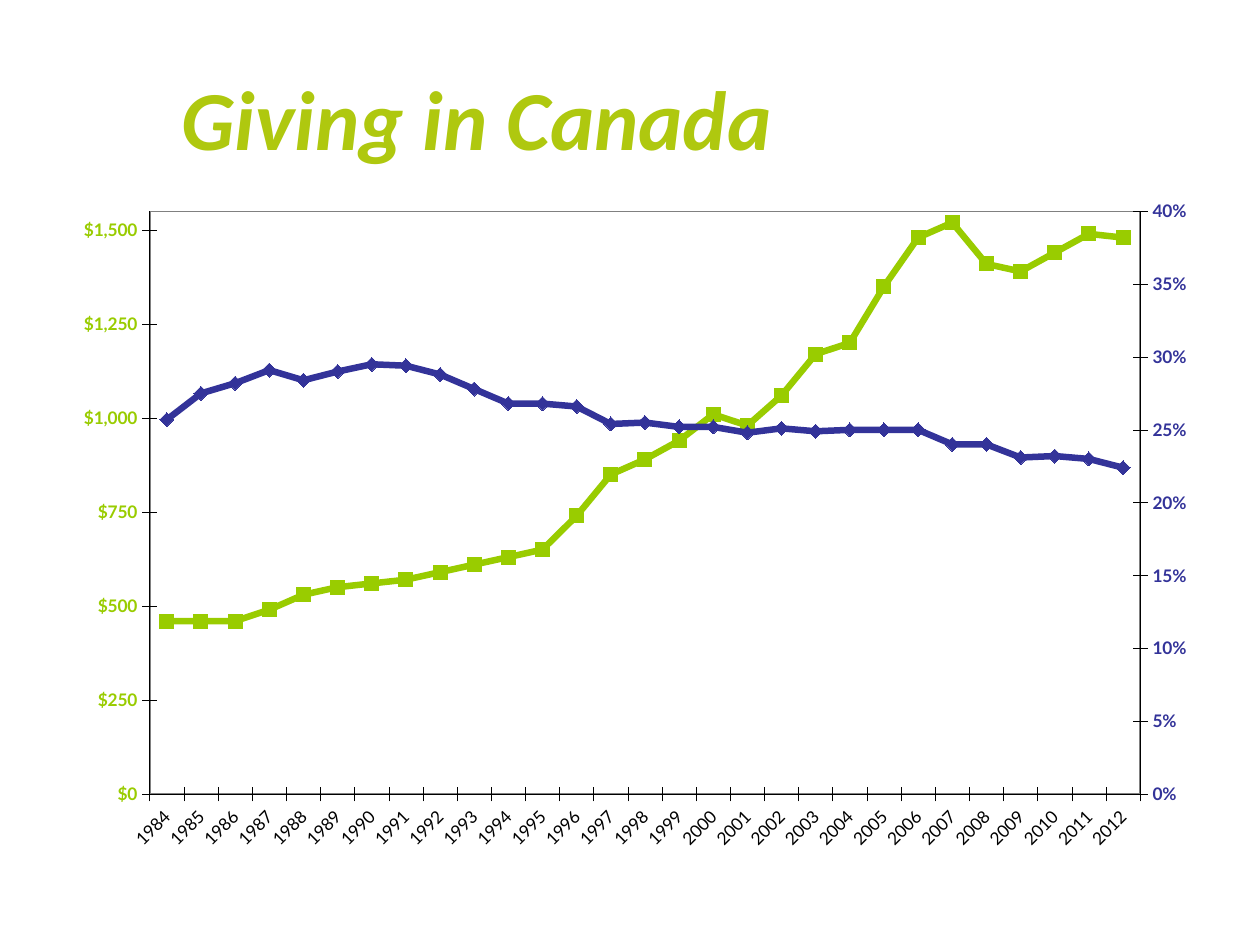
from copy import deepcopy

from lxml import etree
from pptx import Presentation
from pptx.chart.axis import ValueAxis
from pptx.chart.data import CategoryChartData
from pptx.dml.color import RGBColor
from pptx.enum.chart import XL_CHART_TYPE as ChartType
from pptx.enum.chart import XL_MARKER_STYLE as Marker
from pptx.enum.chart import XL_TICK_MARK as TickMark
from pptx.enum.text import MSO_ANCHOR as Anchor
from pptx.oxml import parse_xml
from pptx.oxml.ns import nsdecls, qn
from pptx.util import Inches, Pt

BLACK = RGBColor(0x00, 0x00, 0x00)
GREEN = RGBColor(0x99, 0xCC, 0x00)
BLUE = RGBColor(0x33, 0x33, 0x99)
LIME = RGBColor(0xAF, 0xC8, 0x0F)

YEARS = [str(year) for year in range(1984, 2013)]
DONATIONS = [460, 460, 460, 490, 530, 550, 560, 570, 590, 610,
             630, 650, 740, 850, 890, 940, 1010, 980, 1060, 1170,
             1200, 1350, 1480, 1520, 1410, 1390, 1440, 1490, 1480]
DONOR_SHARES = [0.257, 0.275, 0.282, 0.291, 0.284, 0.29, 0.295, 0.294,
                0.288, 0.278, 0.268, 0.268, 0.266, 0.254, 0.255, 0.252,
                0.252, 0.248, 0.251, 0.249, 0.25, 0.25, 0.25, 0.24,
                0.24, 0.231, 0.232, 0.23, 0.224]


class SlideBuilder:
    """Holds the style and the current slide."""

    title_font = "Calibri"
    chart_font = "Lato"
    label_size = Pt(9.9)
    axis_width = Pt(0.31)
    series_width = Pt(3.72)

    def __init__(self, slide):
        self.slide = slide

    def title(self, text, left, top, width, height):
        box = self.slide.shapes.add_textbox(left, top, width, height)
        frame = box.text_frame
        frame.word_wrap = True
        frame.vertical_anchor = Anchor.MIDDLE
        frame.text = text
        font = frame.paragraphs[0].runs[0].font
        font.name, font.size = self.title_font, Pt(48)
        font.bold = font.italic = True
        font.color.rgb = LIME

    def line_chart(self, categories, series, left, top, width, height):
        data = CategoryChartData()
        data.categories = categories
        for name, values in series:
            data.add_series(name, values)
        frame = self.slide.shapes.add_chart(
            ChartType.LINE_MARKERS, left, top, width, height, data)
        chart = frame.chart
        chart.has_legend = chart.has_title = False
        chart.font.name, chart.font.size = self.chart_font, self.label_size
        chart.plots[0].vary_by_categories = False
        return chart

    def axis(self, axis, color, bold):
        axis.has_major_gridlines = False
        axis.major_tick_mark = TickMark.CROSS
        axis.minor_tick_mark = TickMark.NONE
        axis.format.line.color.rgb = BLACK
        axis.format.line.width = self.axis_width
        font = axis.tick_labels.font
        font.name, font.size, font.bold = self.chart_font, self.label_size, bold
        font.color.rgb = color

    def value_axis(self, axis, color, maximum, unit, number_format):
        self.axis(axis, color, True)
        axis.minimum_scale, axis.maximum_scale = 0, maximum
        axis.major_unit = unit
        axis.tick_labels.number_format = number_format
        axis.tick_labels.number_format_is_linked = False

    def series(self, series, color, marker_style):
        series.smooth = False
        series.format.line.color.rgb = color
        series.format.line.width = self.series_width
        marker = series.marker
        marker.style, marker.size = marker_style, 8
        marker.format.fill.solid()
        marker.format.fill.fore_color.rgb = color
        marker.format.line.color.rgb = color

    def second_axis(self, chart):
        """Move the last series to a right-hand axis and return that axis."""
        plot_area = chart.element.xpath(".//c:plotArea")[0]
        first_plot = plot_area.find(qn("c:lineChart"))
        second_plot = deepcopy(first_plot)
        first_plot.remove(first_plot.findall(qn("c:ser"))[-1])
        for moved in second_plot.findall(qn("c:ser"))[:-1]:
            second_plot.remove(moved)
        first_plot.addnext(second_plot)

        category = deepcopy(plot_area.find(qn("c:catAx")))
        value = deepcopy(plot_area.find(qn("c:valAx")))
        plot_area.find(qn("c:valAx")).addnext(category)
        category.addnext(value)
        category.find(qn("c:delete")).set("val", "1")
        value.find(qn("c:axPos")).set("val", "r")
        value.find(qn("c:crosses")).set("val", "max")

        ids = {axis.find(qn("c:axId")).get("val"): str(number)
               for number, axis in enumerate((category, value), 5001)}
        for part in (second_plot, category, value):
            for tag in ("c:axId", "c:crossAx"):
                for node in part.findall(qn(tag)):
                    node.set("val", ids[node.get("val")])
        return ValueAxis(value)

    def plot_area(self, chart, x, y, width, height):
        area = chart.element.xpath(".//c:plotArea")[0]
        for old in area.findall(qn("c:layout")):
            area.remove(old)
        layout = parse_xml(f"<c:layout {nsdecls('c')}><c:manualLayout/></c:layout>")
        settings = {"layoutTarget": "inner", "xMode": "edge", "yMode": "edge",
                    "x": x, "y": y, "w": width, "h": height}
        for name, value in settings.items():
            etree.SubElement(layout[0], qn(f"c:{name}")).set("val", str(value))
        area.insert(0, layout)
        area.append(parse_xml(
            f"<c:spPr {nsdecls('c', 'a')}>"
            '<a:solidFill><a:srgbClr val="FFFFFF"/></a:solidFill>'
            '<a:ln w="12700"><a:solidFill><a:srgbClr val="808080"/></a:solidFill></a:ln>'
            "</c:spPr>"))


def main():
    presentation = Presentation()
    presentation.slide_width, presentation.slide_height = Inches(10), Inches(7.5)
    slide = presentation.slides.add_slide(presentation.slide_layouts[6])
    builder = SlideBuilder(slide)

    # Chart with donations on the left axis and donor shares on the right
    chart = builder.line_chart(
        YEARS, [("Series 1", DONATIONS), ("Series 2", DONOR_SHARES)],
        Inches(0.17), Inches(1.42), Inches(9.61), Inches(5.48))
    donations, shares = chart.plots[0].series
    builder.series(donations, GREEN, Marker.SQUARE)
    builder.series(shares, BLUE, Marker.DIAMOND)

    # Axes
    builder.axis(chart.category_axis, BLACK, False)
    label_body = chart.element.xpath(".//c:catAx/c:txPr/a:bodyPr")[0]
    label_body.set("rot", "-2700000")
    builder.value_axis(chart.value_axis, GREEN, 1550, 250, '"$"#,##0')
    right_axis = builder.second_axis(chart)
    builder.value_axis(right_axis, BLUE, 0.4, 0.05, "0%")
    builder.plot_area(chart, 0.106, 0.047, 0.818, 0.844)

    # Title
    builder.title("Giving in Canada",
                  Inches(1.34), Inches(0.3), Inches(8.66), Inches(1.25))

    presentation.save("out.pptx")


if __name__ == "__main__":
    main()
